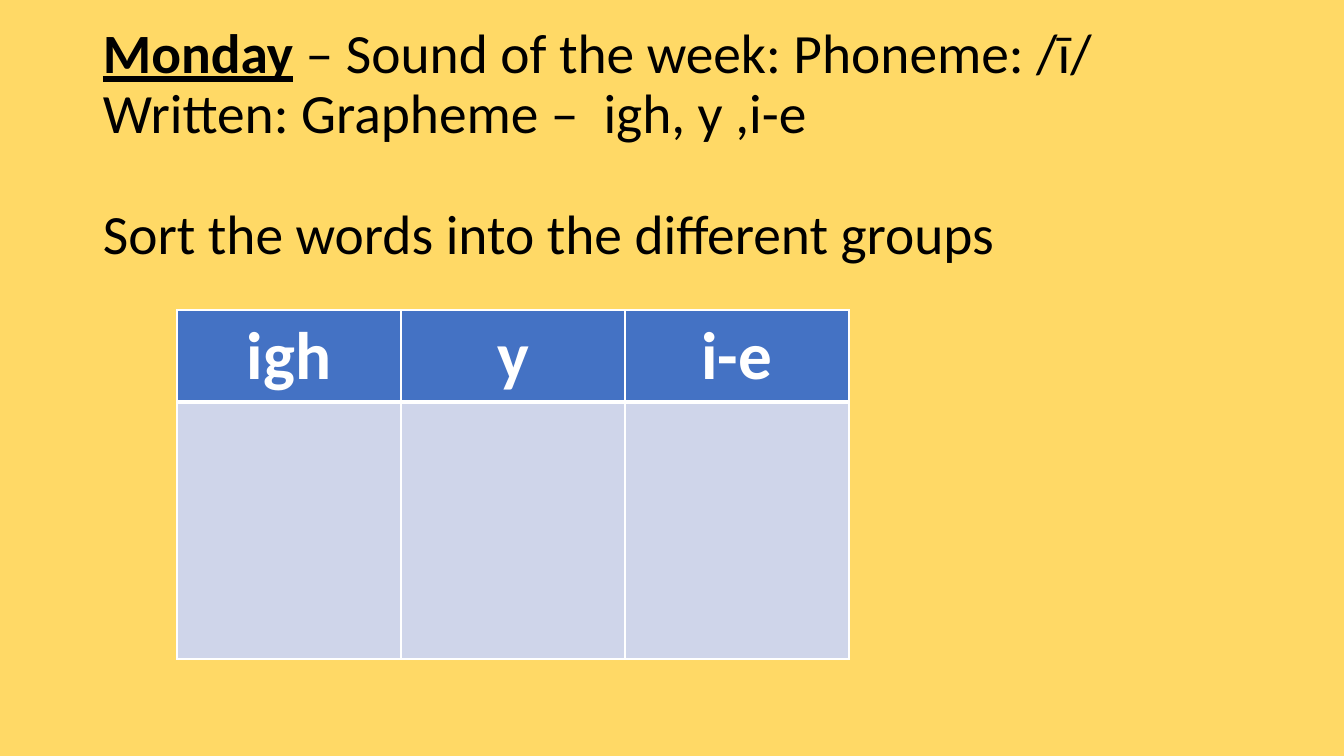
from lxml import etree
from pptx import Presentation
from pptx import util as u
from pptx.dml import color
from pptx.enum import text
from pptx.oxml import ns

FONT = "Calibri"
BLACK = "000000"
WHITE = "FFFFFF"
YELLOW = "FFD966"
BLUE = "4472C4"
PALE_BLUE = "CFD5EA"
TITLE_LINES = [
    [("Monday", True), (" – Sound of the week: Phoneme: /ī/", False)],
    [("Written: Grapheme –  igh, y ,i-e", False)],
    [("Sort the words into the different groups", False)],
]
GRAPHEMES = ["igh", "y", "i-e"]


def px(length):
    return u.Emu(round(length * 914400 / 100.8))


def rgb(code):
    return color.RGBColor.from_string(code)


def add_text(para, content, size, ink=BLACK, bold=False, underline=False):
    span = para.add_run()
    span.text = content
    font = span.font
    font.name, font.size = FONT, u.Pt(size)
    font.bold, font.underline = bold, underline
    font.color.rgb = rgb(ink)


def add_title(page):
    box = page.shapes.add_textbox(px(93), px(73), px(1159), px(146))
    frame = box.text_frame
    frame.word_wrap = True
    frame.vertical_anchor = text.MSO_ANCHOR.MIDDLE
    for index, line in enumerate(TITLE_LINES):
        para = frame.add_paragraph() if index else frame.paragraphs[0]
        para.line_spacing = 0.9
        for content, marked in line:
            add_text(para, content, 39.6, bold=marked, underline=marked)
    frame.paragraphs[-1].space_before = u.Pt(43.5)


def add_border(cell, side, width):
    properties = cell._tc.get_or_add_tcPr()
    line = etree.SubElement(properties, ns.qn(f"a:ln{side}"), w=str(u.Pt(width)))
    fill = etree.SubElement(line, ns.qn("a:solidFill"))
    etree.SubElement(fill, ns.qn("a:srgbClr"), val=WHITE)


def style_cell(cell, fill, thick_side):
    for side in "LRTB":
        add_border(cell, side, 3 if side == thick_side else 1)
    cell.fill.solid()
    cell.fill.fore_color.rgb = rgb(fill)


def add_sorting_table(page):
    columns = len(GRAPHEMES)
    table = page.shapes.add_table(
        2, columns, px(177), px(310), px(224 * columns), px(349)
    ).table
    for row, height in zip(table.rows, (92, 257)):
        row.height = px(height)
    for index, grapheme in enumerate(GRAPHEMES):
        table.columns[index].width = px(224)
        header = table.cell(0, index)
        style_cell(header, BLUE, "B")
        style_cell(table.cell(1, index), PALE_BLUE, "T")
        para = header.text_frame.paragraphs[0]
        para.alignment = text.PP_ALIGN.CENTER
        add_text(para, grapheme, 48, ink=WHITE, bold=True)


def main():
    deck = Presentation()
    deck.slide_width, deck.slide_height = px(1344), px(756)
    page = deck.slides.add_slide(deck.slide_layouts[6])
    page.background.fill.solid()
    page.background.fill.fore_color.rgb = rgb(YELLOW)
    add_title(page)
    add_sorting_table(page)
    deck.save("out.pptx")


if __name__ == "__main__":
    main()
